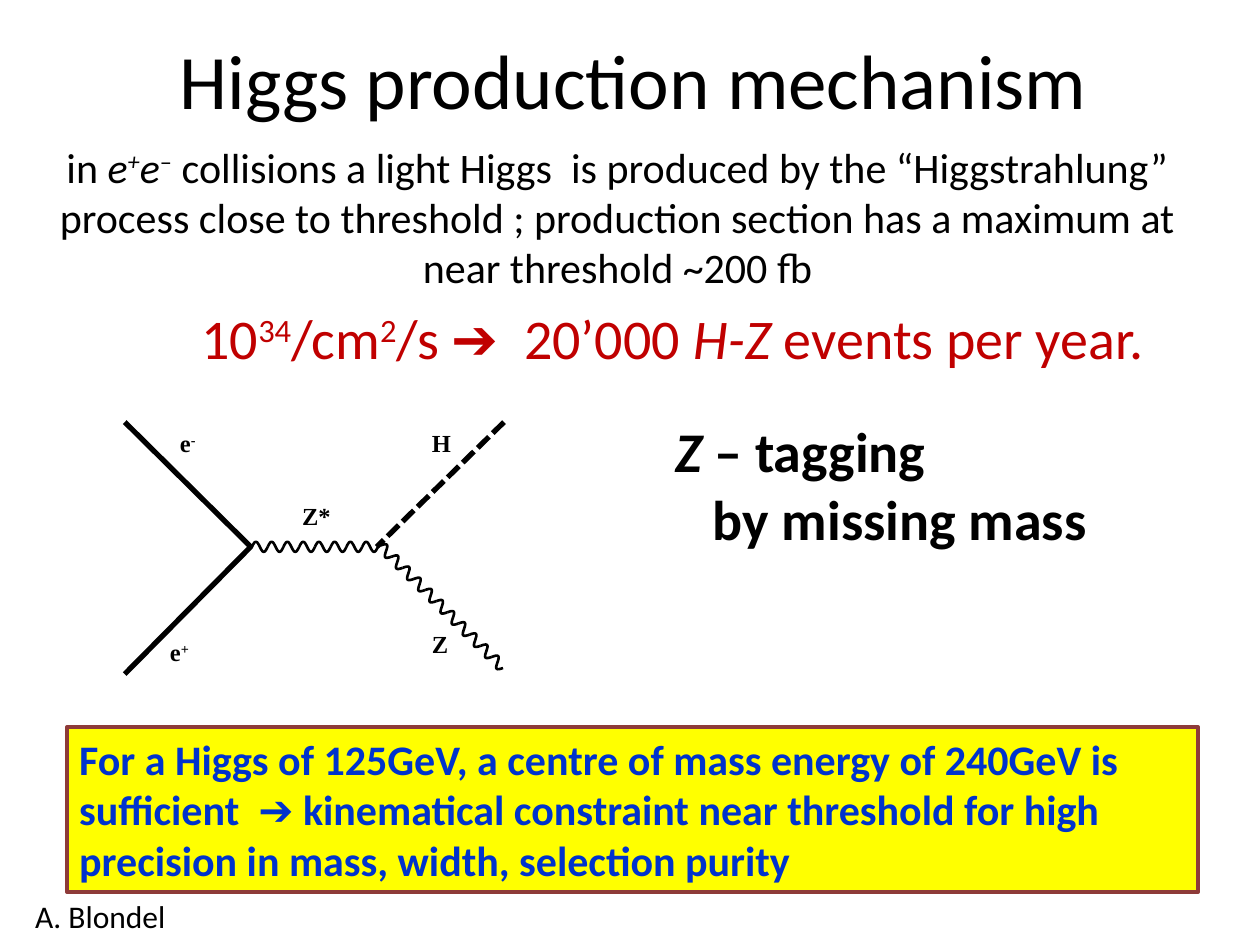
"""Build a slide on how the Higgs boson is made in electron-positron collisions."""
import math
from dataclasses import dataclass

import pptx
import pptx.dml.color
import pptx.enum.dml
import pptx.enum.shapes
import pptx.enum.text
import pptx.oxml
import pptx.util
from pptx.util import Inches

ALIGN = pptx.enum.text.PP_ALIGN
ANCHOR = pptx.enum.text.MSO_ANCHOR


@dataclass(frozen=True)
class Theme:
    """Colours, fonts and type sizes."""
    ink: str = "000000"
    red: str = "C00000"
    blue: str = "0033CC"
    gold: str = "FFFF00"
    rim: str = "8E3B39"
    sans: str = "Calibri"
    serif: str = "Times New Roman"
    head: int = 44
    large: int = 32
    body: int = 24
    small: int = 18
    label: int = 14


THEME = Theme()


@dataclass(frozen=True)
class Run:
    """A piece of text; lift is the baseline shift in percent."""
    text: str
    slant: bool = False
    lift: int = 0


@dataclass(frozen=True)
class Para:
    """A paragraph with one size, colour and font."""
    runs: tuple[Run, ...]
    size: int
    tint: str = THEME.ink
    bold: bool = False
    font: str = THEME.sans
    align: ALIGN = ALIGN.LEFT
    indent: float = 0
    space: float = 0


@dataclass(frozen=True)
class Box:
    """A text box placed in inches."""
    place: tuple[float, float, float, float]
    paras: tuple[Para, ...]
    wrap: bool = True
    anchor: ANCHOR = ANCHOR.TOP


@dataclass(frozen=True)
class Wave:
    """A wavy boson line with its start, angle and count of periods."""
    left: float
    top: float
    angle: float
    count: int


def color(code: str) -> pptx.dml.color.RGBColor:
    """Turn a hex code into a colour."""
    return pptx.dml.color.RGBColor.from_string(code)


def write(frame, box: Box) -> None:
    """Fill a text frame run by run."""
    frame.word_wrap = box.wrap
    frame.vertical_anchor = box.anchor
    for index, para in enumerate(box.paras):
        line = frame.add_paragraph() if index else frame.paragraphs[0]
        line.alignment = para.align
        if para.indent:
            line._p.get_or_add_pPr().set("marL", str(Inches(para.indent)))
        if para.space:
            line.space_before = pptx.util.Pt(para.space)
        for piece in para.runs:
            run = line.add_run()
            run.text = piece.text
            run.font.size = pptx.util.Pt(para.size)
            run.font.name = para.font
            run.font.bold = para.bold
            run.font.italic = piece.slant
            run.font.color.rgb = color(para.tint)
            if piece.lift:
                run._r.get_or_add_rPr().set("baseline", str(piece.lift * 1000))


def add_text(slide, box: Box) -> None:
    """Add a text box."""
    write(slide.shapes.add_textbox(*map(Inches, box.place)).text_frame, box)


def add_panel(slide, box: Box) -> None:
    """Add a filled and framed text panel."""
    kind = pptx.enum.shapes.MSO_SHAPE.RECTANGLE
    panel = slide.shapes.add_shape(kind, *map(Inches, box.place))
    panel.shadow.inherit = False
    panel.fill.solid()
    panel.fill.fore_color.rgb = color(THEME.gold)
    stroke(panel, 2, THEME.rim)
    write(panel.text_frame, box)


def stroke(shape, width: float, tint: str = THEME.ink) -> None:
    """Set the line of a shape."""
    shape.line.color.rgb = color(tint)
    shape.line.width = pptx.util.Pt(width)


def add_track(slide, points: list[tuple[float, float]], width: float, angle: float = 0) -> None:
    """Draw an open line through points given in inches, turned about its centre."""
    spots = [(Inches(left), Inches(top)) for left, top in points]
    maker = slide.shapes.build_freeform(*spots[0])
    maker.add_line_segments(spots[1:], close=False)
    track = maker.convert_to_shape()
    track.shadow.inherit = False
    track.fill.background()
    track.rotation = angle
    stroke(track, width)


def add_wave(slide, wave: Wave) -> None:
    """Draw a wave as a row of equal ripples turned by its angle."""
    period, height, steps = 0.125, 0.04, 16
    turn = math.radians(wave.angle)
    for index in range(wave.count):
        along = (index + 0.5) * period
        left = wave.left + along * math.cos(turn) - period / 2
        top = wave.top + along * math.sin(turn)
        ripple = [(left + period * step / steps,
                   top - height * math.sin(math.tau * step / steps))
                  for step in range(steps + 1)]
        add_track(slide, ripple, 1.5, wave.angle)


def add_dash(slide, start: tuple[float, float], end: tuple[float, float]) -> None:
    """Draw the dashed Higgs line."""
    kind = pptx.enum.shapes.MSO_CONNECTOR.STRAIGHT
    line = slide.shapes.add_connector(kind, *map(Inches, start + end))
    stroke(line, 3)
    line.line.dash_style = pptx.enum.dml.MSO_LINE.SQUARE_DOT
    line._element.spPr.append(pptx.oxml.parse_xml(
        '<a:effectLst xmlns:a="http://schemas.openxmlformats.org/drawingml/2006/main"/>'))


def label(left: float, top: float, text: str, sign: str = "") -> Box:
    """Make a particle label with an optional charge."""
    runs = (Run(text), Run(sign, lift=30)) if sign else (Run(text),)
    para = Para(runs, THEME.label, bold=True, font=THEME.serif)
    return Box((left, top, 0.5, 0.4), (para,))


INTRO = Para((Run("in "), Run("e", True), Run("+", True, 30), Run("e", True), Run("–", lift=30),
              Run(" collisions a light Higgs  is produced by the “Higgstrahlung” process close to "
                  "threshold ; production section has a maximum at near threshold ~200 fb")),
             THEME.body, align=ALIGN.CENTER)
RATE = Para((Run("10"), Run("34", lift=30), Run("/cm"), Run("2", lift=30), Run("/s ➔  20’000 "),
             Run("H-Z", True), Run(" events per year.")),
            THEME.large, THEME.red, indent=1.21, space=6.4)
TEXTS = (
    Box((0.53, 0, 9, 1.25), (Para((Run("Higgs production mechanism"),), THEME.head,
                                  align=ALIGN.CENTER),), anchor=ANCHOR.MIDDLE),
    Box((0.29, 1.07, 9.22, 1.42), (INTRO, RATE)),
    label(1.25, 5.01, "e", "+"),
    label(1.33, 3.35, "e", "-"),
    label(2.3, 3.93, "Z*"),
    label(3.33, 4.94, "Z"),
    label(3.33, 3.35, "H"),
    Box((5.26, 3.26, 3.56, 1.18), (
        Para((Run("Z", True), Run(" – tagging")), THEME.large, bold=True),
        Para((Run("by missing mass"),), THEME.large, bold=True, indent=0.3))),
    Box((0.18, 7.07, 1.25, 0.4), (Para((Run("A. Blondel"),), THEME.small),), wrap=False),
)
CLAIM = Box((0.53, 5.77, 8.98, 1.31), (Para((Run(
    "For a Higgs of 125GeV, a centre of mass energy of 240GeV is sufficient  ➔ kinematical "
    "constraint near threshold for high precision in mass, width, selection purity"),),
    THEME.body, THEME.blue, True),))
WAVES = (Wave(2, 4.34, 0, 8), Wave(3.02, 4.33, 45, 11))


def main() -> None:
    """Draw the slide and save it."""
    deck = pptx.Presentation()
    deck.slide_width, deck.slide_height = Inches(10), Inches(7.5)
    slide = deck.slides.add_slide(deck.slide_layouts[6])
    add_track(slide, [(0.99, 3.35), (1.99, 4.34), (0.99, 5.35)], 3)
    add_dash(slide, (4, 3.35), (2.99, 4.34))
    for box in TEXTS:
        add_text(slide, box)
    for wave in WAVES:
        add_wave(slide, wave)
    add_panel(slide, CLAIM)
    deck.save("out.pptx")


if __name__ == "__main__":
    main()
